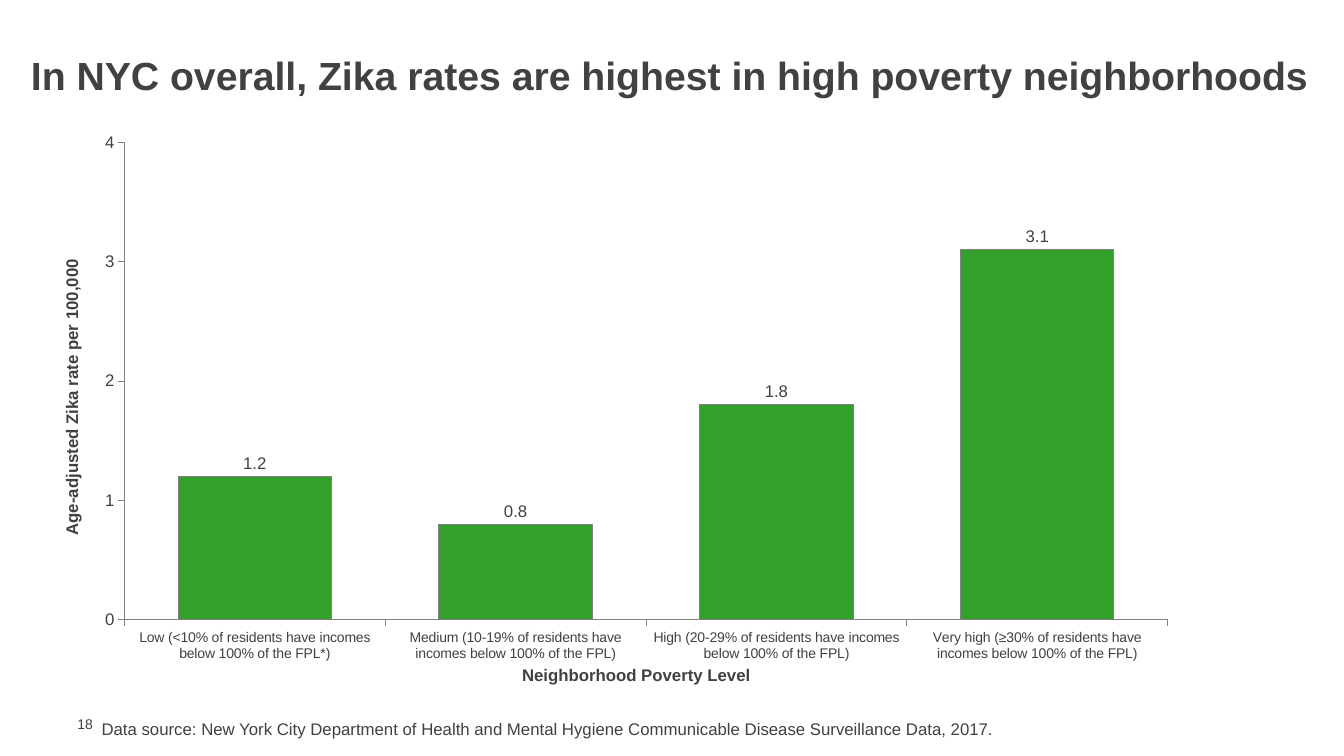
import pptx
import pptx.chart.data
import pptx.dml.color
import pptx.enum.chart
import pptx.enum.text
import pptx.oxml
import pptx.oxml.ns
import pptx.util
from pptx.util import Cm

COLORS = {"text": "414042", "bar": "33A02C", "line": "808080"}
RATES = {
    "Low (<10% of residents have incomes below 100% of the FPL*)": 1.2,
    "Medium (10-19% of residents have incomes below 100% of the FPL)": 0.8,
    "High (20-29% of residents have incomes below 100% of the FPL)": 1.8,
    "Very high (≥30% of residents have incomes below 100% of the FPL)": 3.1,
}
PLOT_AREA = {"x": 0.055, "y": 0.029, "w": 0.868, "h": 0.847}


def style_font(font, size, bold=False):
    font.name = "Arial"
    font.size = pptx.util.Pt(size)
    font.bold = bold
    font.color.rgb = pptx.dml.color.RGBColor.from_string(COLORS["text"])


def style_line(line):
    line.color.rgb = pptx.dml.color.RGBColor.from_string(COLORS["line"])
    line.width = pptx.util.Pt(0.75)


presentation = pptx.Presentation()
presentation.slide_width = Cm(33.86)
presentation.slide_height = Cm(19.05)
slide = presentation.slides.add_slide(presentation.slide_layouts[6])

# Chart
chart_data = pptx.chart.data.CategoryChartData()
chart_data.categories = list(RATES)
chart_data.add_series("Series 1", list(RATES.values()))
chart = slide.shapes.add_chart(
    pptx.enum.chart.XL_CHART_TYPE.COLUMN_CLUSTERED,
    Cm(1.47), Cm(3.18), Cm(30.28), Cm(14.2), chart_data,
).chart
chart.has_legend = False
chart.has_title = False
style_font(chart.font, 10)

axes = [
    (chart.category_axis, "Neighborhood Poverty Level", 10),
    (chart.value_axis, "Age-adjusted Zika rate per 100,000", 12),
]
for axis, title, label_size in axes:
    axis.has_major_gridlines = False
    axis.major_tick_mark = pptx.enum.chart.XL_TICK_MARK.OUTSIDE
    axis.minor_tick_mark = pptx.enum.chart.XL_TICK_MARK.NONE
    style_font(axis.tick_labels.font, label_size)
    style_line(axis.format.line)
    axis.axis_title.text_frame.text = title
    style_font(axis.axis_title.text_frame.paragraphs[0].runs[0].font, 12, bold=True)

value_axis = chart.value_axis
value_axis.minimum_scale = 0
value_axis.maximum_scale = 4
value_axis.major_unit = 1
value_axis.tick_labels.number_format = "0"
value_axis.tick_labels.number_format_is_linked = False

plot = chart.plots[0]
plot.gap_width = 70
plot.vary_by_categories = False
bars = plot.series[0]
bars.format.fill.solid()
bars.format.fill.fore_color.rgb = pptx.dml.color.RGBColor.from_string(COLORS["bar"])
style_line(bars.format.line)
labels = bars.data_labels
labels.show_value = True
labels.number_format = "0.0"
labels.number_format_is_linked = False
labels.position = pptx.enum.chart.XL_LABEL_POSITION.OUTSIDE_END
style_font(labels.font, 12)

# Fixed inner plot area, as fractions of the chart
plot_area = chart.plots[0]._element.getparent()
for old_layout in plot_area.findall(pptx.oxml.ns.qn("c:layout")):
    plot_area.remove(old_layout)
settings = '<c:layoutTarget val="inner"/><c:xMode val="edge"/><c:yMode val="edge"/>'
settings += "".join(f'<c:{name} val="{value}"/>' for name, value in PLOT_AREA.items())
plot_area.insert(0, pptx.oxml.parse_xml(
    f'<c:layout {pptx.oxml.ns.nsdecls("c")}>'
    f"<c:manualLayout>{settings}</c:manualLayout></c:layout>"
))

# Title, source note and slide number
MIDDLE = pptx.enum.text.MSO_ANCHOR.MIDDLE
TOP = pptx.enum.text.MSO_ANCHOR.TOP
texts = [
    ("In NYC overall, Zika rates are highest in high poverty neighborhoods",
     (0.53, 0.91, 32.79, 2.16), 28, True, MIDDLE, 0.13),
    ("Data source: New York City Department of Health and Mental Hygiene "
     "Communicable Disease Surveillance Data, 2017.",
     (2.31, 17.98, 25.2, 0.76), 12, False, TOP, 0.13),
    ("18", (1.7, 18.03, 1.09, 0.43), 10, False, MIDDLE, 0),
]
for text, box, size, bold, anchor, margin in texts:
    frame = slide.shapes.add_textbox(*map(Cm, box)).text_frame
    frame.word_wrap = True
    frame.vertical_anchor = anchor
    frame.margin_top = frame.margin_bottom = Cm(margin)
    if margin == 0:
        frame.margin_right = 0
    frame.text = text
    paragraph = frame.paragraphs[0]
    if bold:
        paragraph.line_spacing = 0.8
    style_font(paragraph.runs[0].font, size, bold)

presentation.save("out.pptx")
